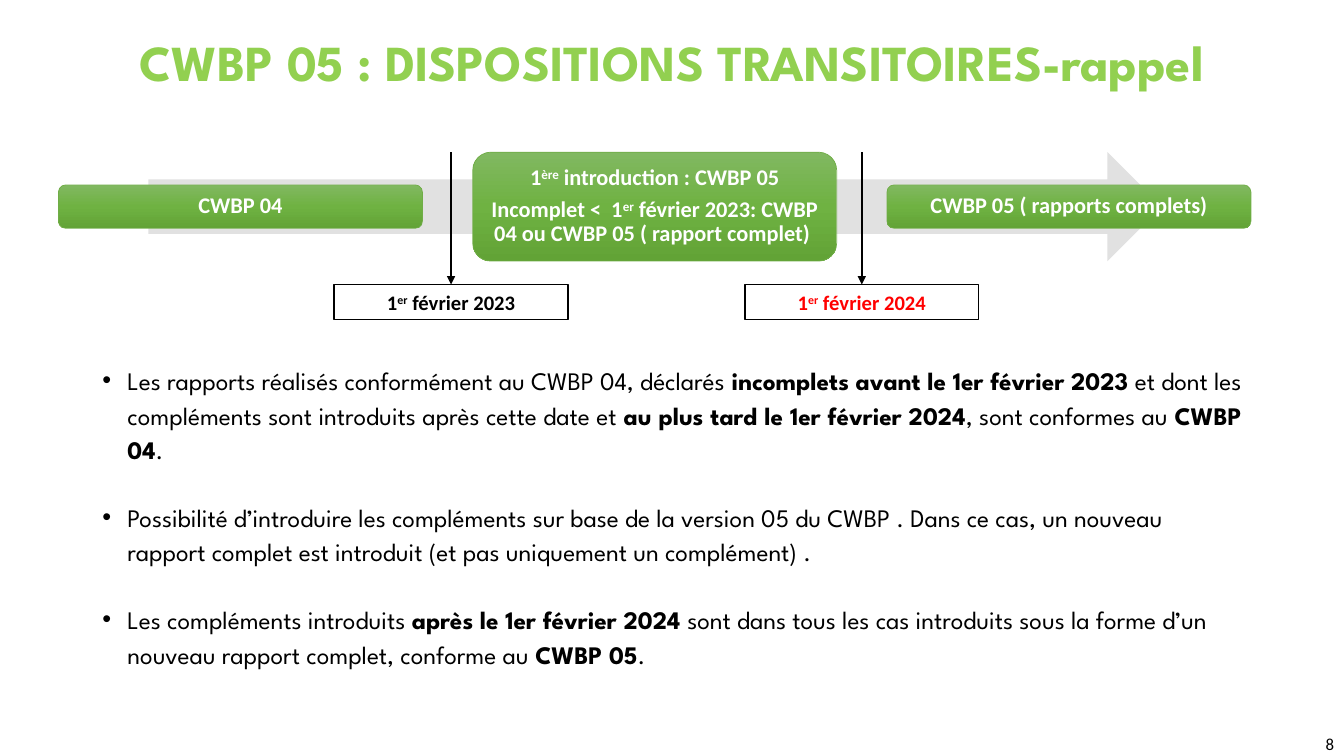
import copy

import pptx
import pptx.dml.color
import pptx.enum.shapes
import pptx.enum.text
import pptx.oxml
import pptx.oxml.ns
import pptx.util

Pt = pptx.util.Pt
RGB = pptx.dml.color.RGBColor
SHAPE = pptx.enum.shapes.MSO_SHAPE
ALIGN = pptx.enum.text.PP_ALIGN
ANCHOR = pptx.enum.text.MSO_ANCHOR
NS = pptx.oxml.ns.nsdecls("a")

BLACK = RGB(0x00, 0x00, 0x00)
WHITE = RGB(0xFF, 0xFF, 0xFF)
RED = RGB(0xFF, 0x00, 0x00)
LIME = RGB(0x92, 0xD0, 0x50)
GRAY = RGB(0xE1, 0xE1, 0xE1)
GREEN = RGB(0x70, 0xAD, 0x47)
SHADES = ((0, RGB(0x81, 0xB8, 0x61)),
          (0.5, RGB(0x6F, 0xB2, 0x42)),
          (1, RGB(0x62, 0xA3, 0x36)))

HEAD = "League Spartan"
PLAIN = "Calibri"

TOP, HIGH = 108.7, 77.8
MID = TOP + HIGH / 2
LEFT, STEP, WIDE = 41.8, 295.9, 260
DATE_TOP, DATE_WIDE, DATE_HIGH = 203.3, 167, 25

STAGES = (
    (("CWBP 04",), 31),
    (("1^ère^ introduction : CWBP 05",
      "Incomplet <  1^er^ février 2023: CWBP 04 ou CWBP 05 ( rapport complet) "),
     HIGH),
    (("CWBP 05 ( rapports complets)",), 31),
)
DATES = (
    ("1^er^ février 2023", 322.2, BLACK),
    ("1^er^ février 2024", 615.6, RED),
)
RULES = (
    "Les rapports réalisés conformément au CWBP 04, déclarés "
    "*incomplets avant le 1er février 2023* et dont les compléments sont "
    "introduits après cette date et *au plus tard le 1er février 2024*, "
    "sont conformes au *CWBP 04*.",
    "Possibilité d’introduire les compléments sur base de la version 05 du "
    "CWBP\u00a0. Dans ce cas, un nouveau rapport complet est introduit "
    "(et pas uniquement un complément) .",
    "Les compléments introduits *après le 1er février 2024 *sont dans tous "
    "les cas introduits sous la forme d’un nouveau rapport complet, "
    "conforme au *CWBP 05*.",
)


def write(shape, lines, size, font=PLAIN, color=BLACK, bold=False,
          align=ALIGN.CENTER, anchor=ANCHOR.MIDDLE, space=1.0, gap=0,
          bullet=False, pad=(7.2, 3.6)):
    """Fill a shape with text; *...* marks bold and ^...^ superscript."""
    frame = shape.text_frame
    frame.word_wrap = True
    frame.vertical_anchor = anchor
    frame.margin_left = frame.margin_right = Pt(pad[0])
    frame.margin_top = frame.margin_bottom = Pt(pad[1])
    for i, line in enumerate(lines):
        para = frame.add_paragraph() if i else frame.paragraphs[0]
        if bullet:
            add_dot(para)
        para.alignment = align
        para.line_spacing = space
        para.space_before = Pt(gap if i else 0)
        mark = "^" if "^" in line else "*"
        for j, part in enumerate(line.split(mark)):
            if not part:
                continue
            run = para.add_run()
            run.text = part
            run.font.name = font
            run.font.size = Pt(size)
            run.font.color.rgb = color
            odd = j % 2 == 1
            run.font.bold = bold or (odd and mark == "*")
            if odd and mark == "^":
                run.font._element.set("baseline", "30000")
    return frame


def add_dot(para):
    props = para._p.get_or_add_pPr()
    props.set("marL", str(Pt(18)))
    props.set("indent", str(-Pt(18)))
    props.append(pptx.oxml.parse_xml(f'<a:buFont {NS} typeface="Arial"/>'))
    props.append(pptx.oxml.parse_xml(f'<a:buChar {NS} char="•"/>'))


def add_text(slide, x, y, w, h, lines, size, **style):
    box = slide.shapes.add_textbox(Pt(x), Pt(y), Pt(w), Pt(h))
    return write(box, lines, size, **style)


def add_form(slide, kind, x, y, w, h, fill=None, line=None, width=1):
    form = slide.shapes.add_shape(kind, Pt(x), Pt(y), Pt(w), Pt(h))
    form.shadow.inherit = False
    if fill is None:
        form.fill.background()
    else:
        form.fill.solid()
        form.fill.fore_color.rgb = fill
    if line is None:
        form.line.fill.background()
    else:
        form.line.color.rgb = line
        form.line.width = Pt(width)
    return form


def shade(form):
    """Give a form the green gradient, from top to bottom."""
    form.fill.gradient()
    form.fill.gradient_angle = 270
    stops = form._element.spPr.find(".//" + pptx.oxml.ns.qn("a:gsLst"))
    stops.append(copy.deepcopy(stops[-1]))
    for stop, (place, color) in zip(form.fill.gradient_stops, SHADES):
        stop.position = place
        stop.color.rgb = color


def add_stage(slide, x, lines, high):
    form = add_form(slide, SHAPE.ROUNDED_RECTANGLE, x, MID - high / 2,
                    WIDE, high, fill=GREEN, line=GREEN, width=0.5)
    shade(form)
    write(form, lines, 16, color=WHITE, bold=True, space=0.9, gap=5.6,
          pad=(9, 5))


def add_date(slide, text, x, color):
    """Add a date box and the arrow that points down to it."""
    box = add_form(slide, SHAPE.RECTANGLE, x - DATE_WIDE / 2, DATE_TOP,
                   DATE_WIDE, DATE_HIGH, line=BLACK)
    write(box, [text], 14.7, color=color, bold=True)
    arrow = slide.shapes.add_connector(
        pptx.enum.shapes.MSO_CONNECTOR.STRAIGHT,
        Pt(x), Pt(TOP), Pt(x), Pt(DATE_TOP))
    arrow.end_connect(box, 0)
    arrow.line.color.rgb = BLACK
    arrow.line.width = Pt(1)
    tip = pptx.oxml.parse_xml(f'<a:tailEnd {NS} type="triangle"/>')
    arrow.line._get_or_add_ln().append(tip)
    arrow._element.spPr.append(pptx.oxml.parse_xml(f"<a:effectLst {NS}/>"))


def main():
    deck = pptx.Presentation()
    deck.slide_width, deck.slide_height = Pt(960), Pt(540)
    slide = deck.slides.add_slide(deck.slide_layouts[6])

    add_text(slide, 66, 13, 828, 67,
             ["CWBP 05 : DISPOSITIONS TRANSITOIRES-rappel"], 36,
             font=HEAD, color=LIME, bold=True, space=0.9)
    add_text(slide, 744, 520.5, 216, 21.6, ["8"], 12, align=ALIGN.RIGHT)
    body = add_text(slide, 66, 254, 828, 227, RULES, 18, font=HEAD,
                    align=ALIGN.LEFT, anchor=ANCHOR.TOP, space=1.15,
                    gap=23.3, bullet=True)
    body.paragraphs[0].alignment = ALIGN.JUSTIFY

    add_form(slide, SHAPE.RIGHT_ARROW, 106, TOP, 724, HIGH, fill=GRAY)
    for i, (lines, high) in enumerate(STAGES):
        add_stage(slide, LEFT + i * STEP, lines, high)
    for text, x, color in DATES:
        add_date(slide, text, x, color)

    deck.save("out.pptx")


if __name__ == "__main__":
    main()
